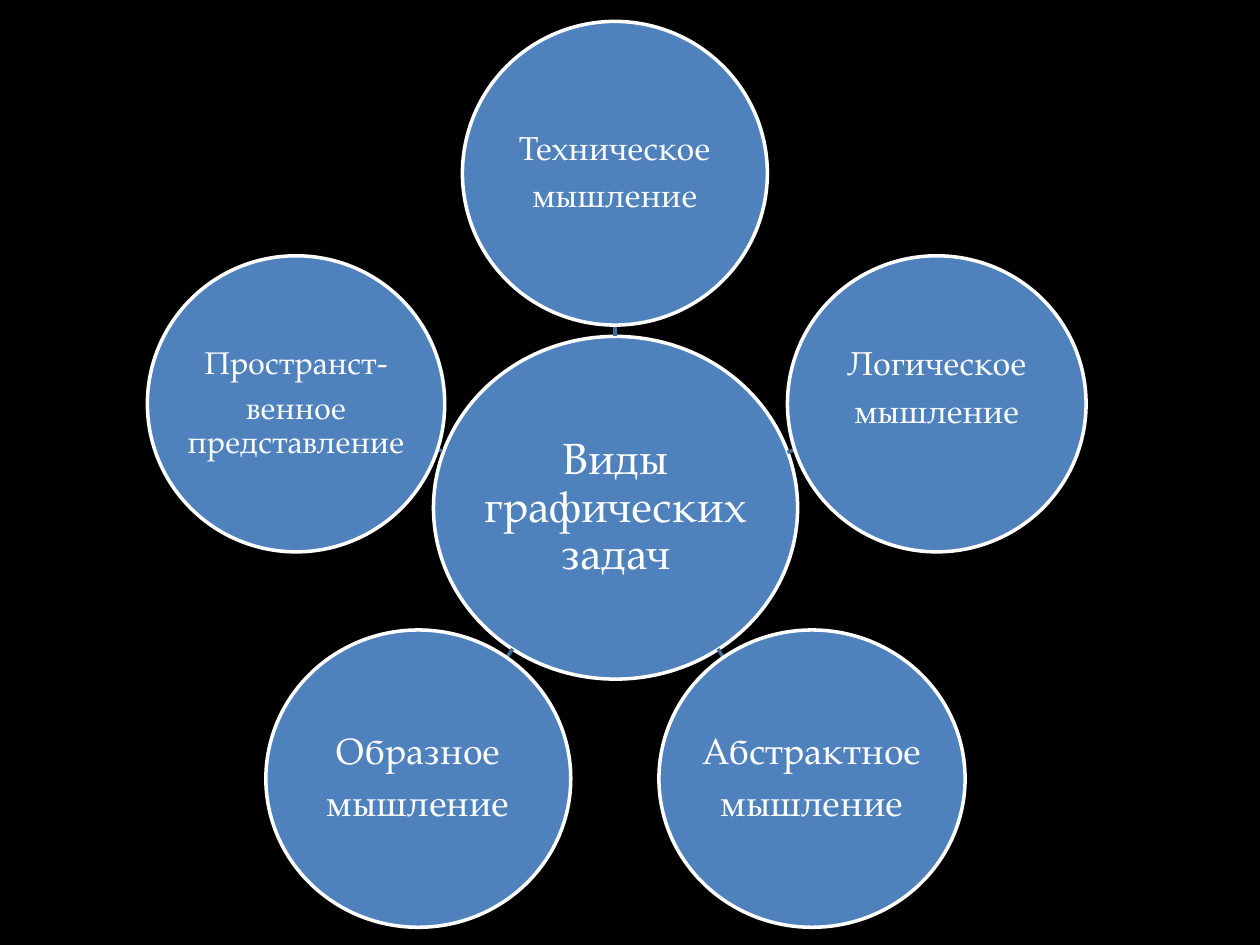
"""Build a radial diagram of the kinds of graphic tasks."""
from lxml.etree import SubElement
from pptx import Presentation
from pptx.dml.color import RGBColor
from pptx.enum.shapes import MSO_CONNECTOR, MSO_SHAPE
from pptx.enum.text import MSO_ANCHOR, PP_ALIGN
from pptx.oxml.ns import qn
from pptx.util import Inches, Pt

BLACK = RGBColor(0x00, 0x00, 0x00)
WHITE = RGBColor(0xFF, 0xFF, 0xFF)
BLUE = RGBColor(0x4F, 0x81, 0xBD)
DARK_BLUE = RGBColor(0x3F, 0x67, 0x97)
FONT = "TeX Gyre Pagella"
LINE_WIDTH = Pt(2)
INSET = 0.01

CENTER = ("Виды графических задач", 25, (3.44, 2.67, 2.89, 2.72))
SATELLITES = [
    {"text": "Техническое\nмышление", "size": 19, "lift": 0,
     "box": (3.67, 0.17, 2.42, 2.41), "link": (4.88, 2.67, 4.88, 2.57)},
    {"text": "Логическое\nмышление", "size": 19, "lift": 0.24,
     "box": (6.25, 2.03, 2.37, 2.35), "link": (6.25, 3.59, 6.31, 3.57)},
    {"text": "Абстрактное\nмышление", "size": 21, "lift": 0,
     "box": (5.23, 5, 2.43, 2.36), "link": (5.7, 5.15, 5.74, 5.22)},
    {"text": "Образное\nмышление", "size": 21, "lift": 0,
     "box": (2.11, 5, 2.42, 2.36), "link": (4.07, 5.15, 4.02, 5.22)},
    {"text": "Пространст-\nвенное представление", "size": 18, "lift": 0,
     "box": (1.17, 2.03, 2.36, 2.35), "link": (3.51, 3.58, 3.48, 3.57)},
]


def add_circle(slide, text, size, box, lift=0):
    bounds = [Inches(length) for length in box]
    circle = slide.shapes.add_shape(MSO_SHAPE.OVAL, *bounds)
    circle.shadow.inherit = False
    circle.fill.solid()
    circle.fill.fore_color.rgb = BLUE
    circle.line.color.rgb = WHITE
    circle.line.width = LINE_WIDTH

    text_frame = slide.shapes.add_textbox(*bounds).text_frame
    text_frame.text = text
    text_frame.word_wrap = True
    text_frame.vertical_anchor = MSO_ANCHOR.MIDDLE
    text_frame.margin_left = text_frame.margin_right = Inches(INSET)
    text_frame.margin_top = Inches(INSET)
    text_frame.margin_bottom = Inches(INSET + lift)
    for paragraph in text_frame.paragraphs:
        paragraph.alignment = PP_ALIGN.CENTER
        paragraph.line_spacing = 0.9
        paragraph.space_after = Pt(size * 0.35)
        for run in paragraph.runs:
            run.font.name = FONT
            run.font.size = Pt(size)
            run.font.color.rgb = WHITE


def add_link(slide, ends):
    connector = slide.shapes.add_connector(
        MSO_CONNECTOR.STRAIGHT, *[Inches(length) for length in ends])
    connector.line.color.rgb = DARK_BLUE
    connector.line.width = LINE_WIDTH
    SubElement(connector._element.spPr, qn("a:effectLst"))


def main():
    presentation = Presentation()
    presentation.slide_width = Inches(10)
    presentation.slide_height = Inches(7.5)
    slide = presentation.slides.add_slide(presentation.slide_layouts[6])
    slide.background.fill.solid()
    slide.background.fill.fore_color.rgb = BLACK

    add_circle(slide, *CENTER)
    for satellite in SATELLITES:
        add_link(slide, satellite["link"])
        add_circle(slide, satellite["text"], satellite["size"],
                   satellite["box"], satellite["lift"])
    presentation.save("out.pptx")


if __name__ == "__main__":
    main()
